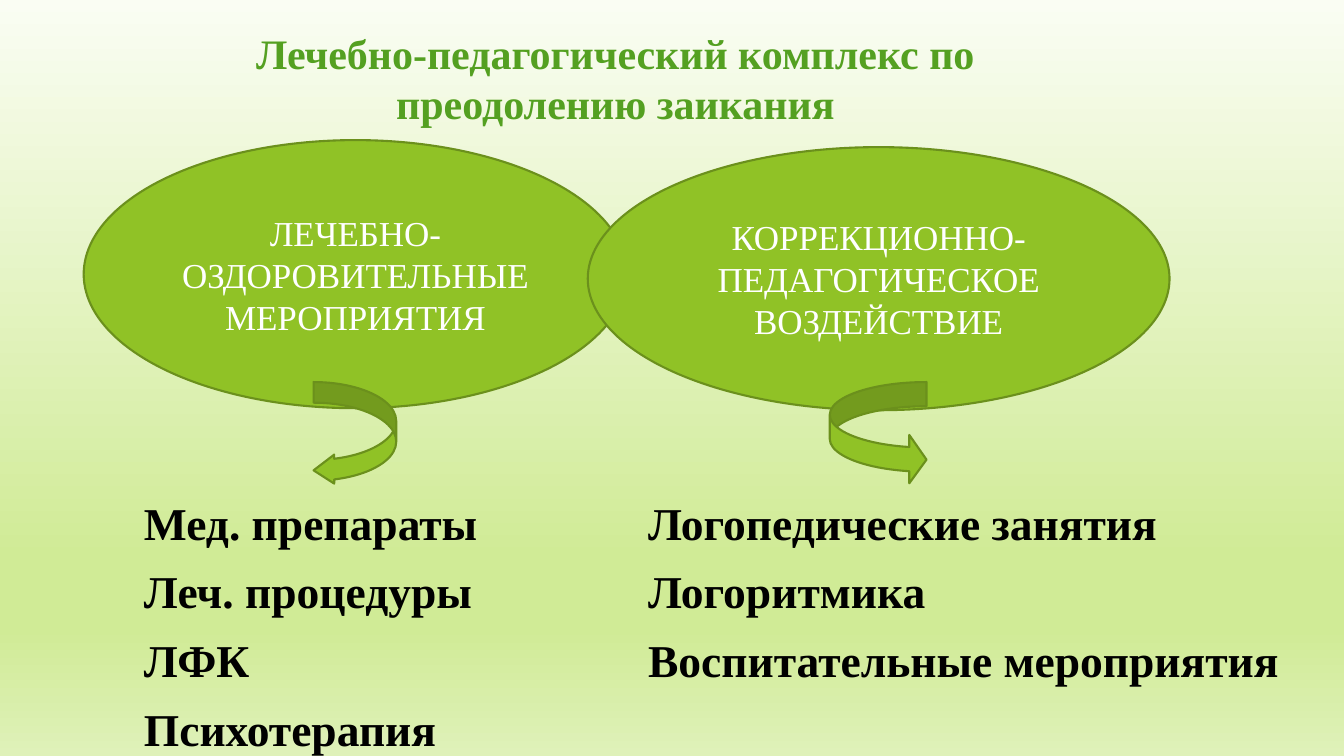
from lxml.etree import SubElement
from pptx import Presentation
from pptx.dml.color import RGBColor
from pptx.enum.shapes import MSO_SHAPE
from pptx.enum.text import MSO_ANCHOR, PP_ALIGN
from pptx.oxml.ns import qn
from pptx.util import Inches, Pt

FONT = "Times New Roman"
COLORS = {"title": "54A021", "fill": "90C226", "line": "6B901C",
          "light": "FFFFFF", "text": "000000"}
BACKGROUND = [(0, "FAFDF3"), (74, "D0EB96"), (83, "D0EB96"), (100, "DFF1B9")]

TITLE = "Лечебно-педагогический комплекс по преодолению заикания"
# Boxes are left, top, width, height in inches
TITLE_BOX = (1.86, 0.22, 8.49, 1.1)
BRANCHES = [
    {"name": "ЛЕЧЕБНО-ОЗДОРОВИТЕЛЬНЫЕ МЕРОПРИЯТИЯ",
     "ellipse": (0.83, 1.39, 5.39, 2.66),
     "arrow": (MSO_SHAPE.CURVED_LEFT_ARROW, (3.11, 3.79, 0.82, 1.02), (0.25, 0.351, 0.25)),
     "items": ["Мед. препараты", "Леч. процедуры", "ЛФК", "Психотерапия"]},
    {"name": "КОРРЕКЦИОННО-ПЕДАГОГИЧЕСКОЕ ВОЗДЕЙСТВИЕ",
     "ellipse": (5.83, 1.46, 5.77, 2.61),
     "arrow": (MSO_SHAPE.CURVED_RIGHT_ARROW, (8.23, 3.79, 0.96, 1.01), (0.25, 0.5, 0.178)),
     "items": ["Логопедические занятия", "Логоритмика", "Воспитательные мероприятия"]},
]
LIST_LEFT, LIST_TOP, LIST_STEP = 1.33, 4.86, 5
LIST_WIDTH, LIST_HEIGHT = 6.6, 2.6


def color(name):
    return RGBColor.from_string(COLORS[name])


def paint_background(slide):
    """Fill the background with a top-to-bottom gradient of several stops."""
    fill = slide.background.fill
    fill.gradient()
    fill.gradient_angle = 270
    stops = next(slide.background._cSld.iter(qn("a:gsLst")))
    for stop in list(stops):
        stops.remove(stop)
    for percent, value in BACKGROUND:
        stop = SubElement(stops, qn("a:gs"), pos=str(percent * 1000))
        SubElement(stop, qn("a:srgbClr"), val=value)


def write(s, lines, size, ink, bold=False, align=PP_ALIGN.CENTER,
          anchor=MSO_ANCHOR.MIDDLE, gap=0):
    tf = s.text_frame
    tf.word_wrap = True
    tf.vertical_anchor = anchor
    for i, line in enumerate(lines):
        p = tf.add_paragraph() if i else tf.paragraphs[0]
        p.text = line
        p.alignment = align
        p.space_before = Pt(gap if i else 0)
        p.font.name, p.font.size, p.font.bold = FONT, Pt(size), bold
        p.font.color.rgb = color(ink)


def add_text(slide, box, lines, *style, **options):
    write(slide.shapes.add_textbox(*map(Inches, box)), lines, *style, **options)


def add_green_shape(slide, kind, box):
    s = slide.shapes.add_shape(kind, *map(Inches, box))
    s.shadow.inherit = False
    s.fill.solid()
    s.fill.fore_color.rgb = color("fill")
    s.line.color.rgb = color("line")
    s.line.width = Pt(1.5)
    return s


def main():
    prs = Presentation()
    prs.slide_width, prs.slide_height = Inches(13.33), Inches(7.5)
    slide = prs.slides.add_slide(prs.slide_layouts[6])
    paint_background(slide)
    add_text(slide, TITLE_BOX, [TITLE], 30, "title", bold=True, anchor=MSO_ANCHOR.BOTTOM)

    for branch in BRANCHES:
        ellipse = add_green_shape(slide, MSO_SHAPE.OVAL, branch["ellipse"])
        write(ellipse, [branch["name"]], 25, "light")

    for column, branch in enumerate(BRANCHES):
        box = (LIST_LEFT + column * LIST_STEP, LIST_TOP, LIST_WIDTH, LIST_HEIGHT)
        add_text(slide, box, branch["items"], 32.5, "text", bold=True,
                 align=PP_ALIGN.LEFT, anchor=MSO_ANCHOR.TOP, gap=10)
        kind, arrow_box, adjustments = branch["arrow"]
        arrow = add_green_shape(slide, kind, arrow_box)
        for i, value in enumerate(adjustments):
            arrow.adjustments[i] = value

    prs.save("out.pptx")


if __name__ == "__main__":
    main()
